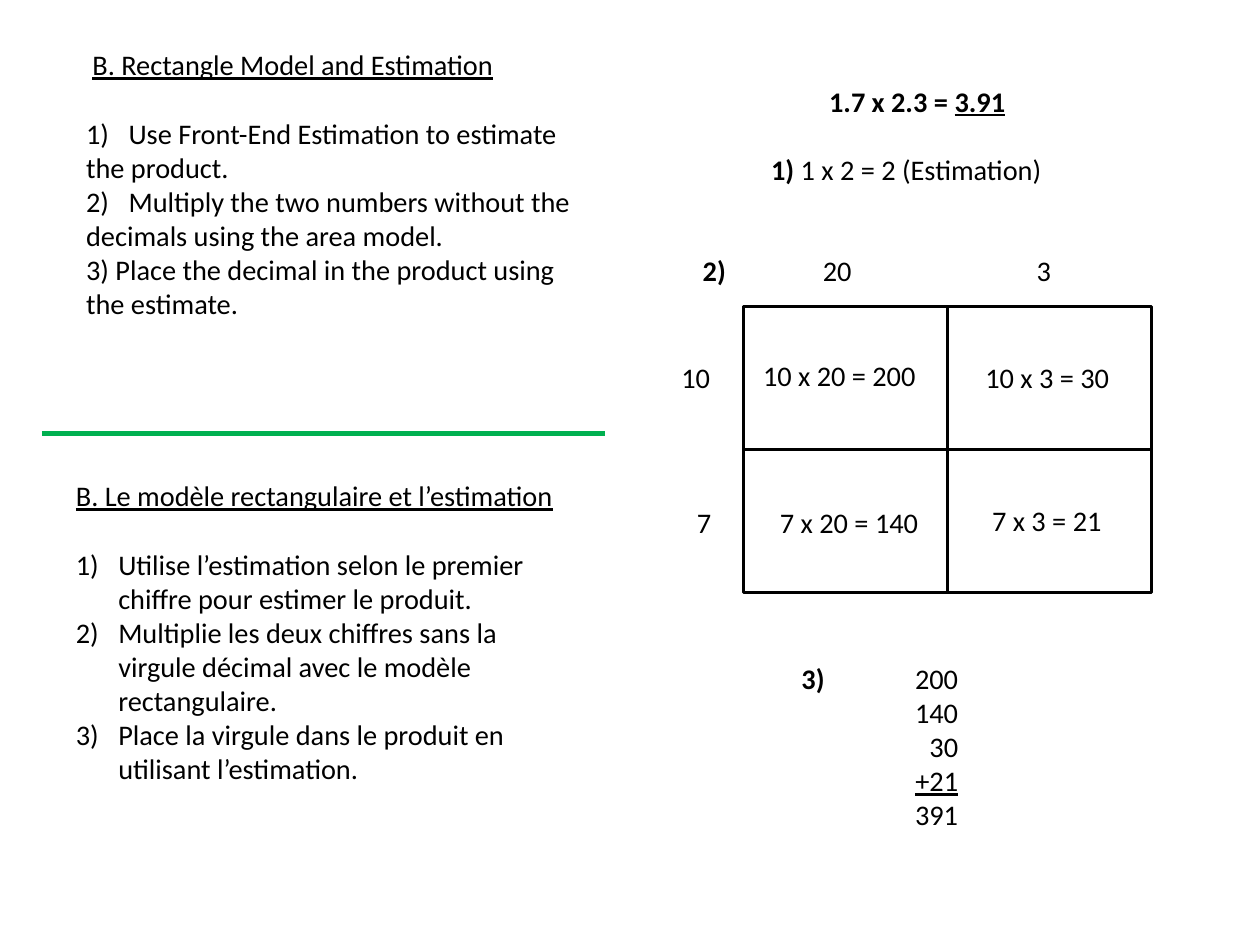
from lxml import etree
from pptx import Presentation
from pptx.dml.color import RGBColor
from pptx.enum import shapes, text
from pptx.oxml import ns
from pptx.util import Cm, Pt

BLACK = RGBColor(0, 0, 0)
GREEN = RGBColor(0x00, 0xB0, 0x50)
FONT, SIZE, LINE_GAP = "Calibri", Pt(18), Pt(22)
HANG = 0.95

ENGLISH_TITLE = "B. Rectangle Model and Estimation"
# Each step line: wording and the number its list starts at (None: plain line)
ENGLISH_STEPS = [
    ("Use Front-End Estimation to estimate", 1),
    ("the product.", None),
    ("Multiply the two numbers without the", 2),
    ("decimals using the area model.", None),
    ("3) Place the decimal in the product using", None),
    ("the estimate.", None),
]
FRENCH_TITLE = "B. Le modèle rectangulaire et l’estimation"
FRENCH_STEPS = [
    ("Utilise l’estimation selon le premier chiffre pour estimer le produit.", 1),
    ("Multiplie les deux chiffres sans la virgule décimal avec le modèle rectangulaire.", 1),
    ("Place la virgule dans le produit en utilisant l’estimation.", 1),
]
# Wording, offset from the grid's corner, bold
GRID_LABELS = [
    ("2)", -1.17, -1.32, True),
    ("20", 1.52, -1.32, False),
    ("3", 6.31, -1.32, False),
    ("10", -1.65, 1.09, False),
    ("7", -1.3, 4.32, False),
    ("10 x 20 = 200", 0.18, 1.04, False),
    ("10 x 3 = 30", 5.16, 1.07, False),
    ("7 x 20 = 140", 0.56, 4.32, False),
    ("7 x 3 = 21", 5.31, 4.29, False),
]
ADDENDS = ["200", "140", "30", "+21"]
TOTAL = "391"


def add_frame(slide, left, top, width, height):
    frame = slide.shapes.add_textbox(Cm(left), Cm(top), Cm(width), Cm(height)).text_frame
    frame.word_wrap = True
    return frame


def write(frame, wording="", bold=False, underline=False):
    """Fill the first paragraph while it is empty, then add further ones."""
    line = frame.paragraphs[0]
    if line.runs:
        line = frame.add_paragraph()
    line.font.name, line.font.size, line.font.color.rgb = FONT, SIZE, BLACK
    line.font.bold, line.font.underline = bold, underline
    line.add_run().text = wording
    return line


def indent(line, margin, hang=0):
    properties = line._p.get_or_add_pPr()
    properties.set("marL", str(Cm(margin)))
    properties.set("indent", str(-Cm(hang)))
    return properties


def number(line, start):
    numbering = etree.SubElement(indent(line, HANG, HANG), ns.qn("a:buAutoNum"))
    numbering.set("type", "arabicParenR")
    if start > 1:
        numbering.set("startAt", str(start))


def add_rule(slide, start, end, color, width):
    rule = slide.shapes.add_connector(
        shapes.MSO_CONNECTOR.STRAIGHT, *(Cm(n) for n in (*start, *end)))
    rule.line.color.rgb, rule.line.width = color, Pt(width)
    etree.SubElement(rule._element.spPr, ns.qn("a:effectLst"))
    return rule


def add_instructions(slide, left, top, width, height, title, steps, title_indent=0):
    frame = add_frame(slide, left, top, width, height)
    heading = write(frame, title, underline=True)
    heading.space_after = LINE_GAP
    indent(heading, title_indent)
    for wording, start in steps:
        step = write(frame, wording)
        if start:
            number(step, start)


def add_equation(slide, left, top, width, height):
    frame = add_frame(slide, left, top, width, height)
    equation = write(frame, "1.7 x 2.3 = ", bold=True)
    indent(equation, 1.3)
    equation.space_after = LINE_GAP
    product = equation.add_run()
    product.text, product.font.underline = "3.91", True
    estimate = write(frame, "1) ", bold=True)
    estimation = estimate.add_run()
    estimation.text, estimation.font.bold = "1 x 2 = 2 (Estimation)", False


def add_area_model(slide, left, top, width, height):
    # Outer rectangle
    area = slide.shapes.add_shape(
        shapes.MSO_SHAPE.RECTANGLE, Cm(left), Cm(top), Cm(width), Cm(height))
    area.shadow.inherit = False
    area.fill.background()
    area.line.color.rgb, area.line.width = BLACK, Pt(2)
    # Dividers between the middles of opposite sides
    middle_x, middle_y = left + width / 2, top + height / 2
    for start, end, sides in [
        ((left, middle_y), (left + width, middle_y), (1, 3)),
        ((middle_x, top), (middle_x, top + height), (0, 2)),
    ]:
        divider = add_rule(slide, start, end, BLACK, 2)
        divider.begin_connect(area, sides[0])
        divider.end_connect(area, sides[1])
    # Factors and partial products
    for wording, across, down, bold in GRID_LABELS:
        write(add_frame(slide, left + across, top + down, 4, 1.02), wording, bold)


def add_sum(slide, left, top, width, height):
    write(add_frame(slide, left, top, 1.5, 1.02), "3)", bold=True)
    figures = add_frame(slide, left + 1.5, top, width - 1.5, height)
    for figure in [*ADDENDS, TOTAL]:
        line = write(figures, figure, underline=figure == ADDENDS[-1])
        line.alignment = text.PP_ALIGN.RIGHT


def main():
    deck = Presentation()
    deck.slide_width, deck.slide_height = Cm(28.22), Cm(21.16)
    slide = deck.slides.add_slide(deck.slide_layouts[6])

    # Left half: instructions in two languages
    add_instructions(slide, 1.68, 0.94, 12.45, 6.4, ENGLISH_TITLE, ENGLISH_STEPS, 0.14)
    add_rule(slide, (0.94, 9.7), (13.56, 9.7), GREEN, 3)
    add_instructions(slide, 1.45, 10.59, 11.56, 7.19, FRENCH_TITLE, FRENCH_STEPS)

    # Right half: worked example
    add_equation(slide, 17.02, 1.75, 9.14, 2.57)
    add_area_model(slide, 16.66, 6.86, 9.14, 6.4)
    add_sum(slide, 17.7, 14.68, 4.01, 4.11)

    deck.save("out.pptx")


if __name__ == "__main__":
    main()
